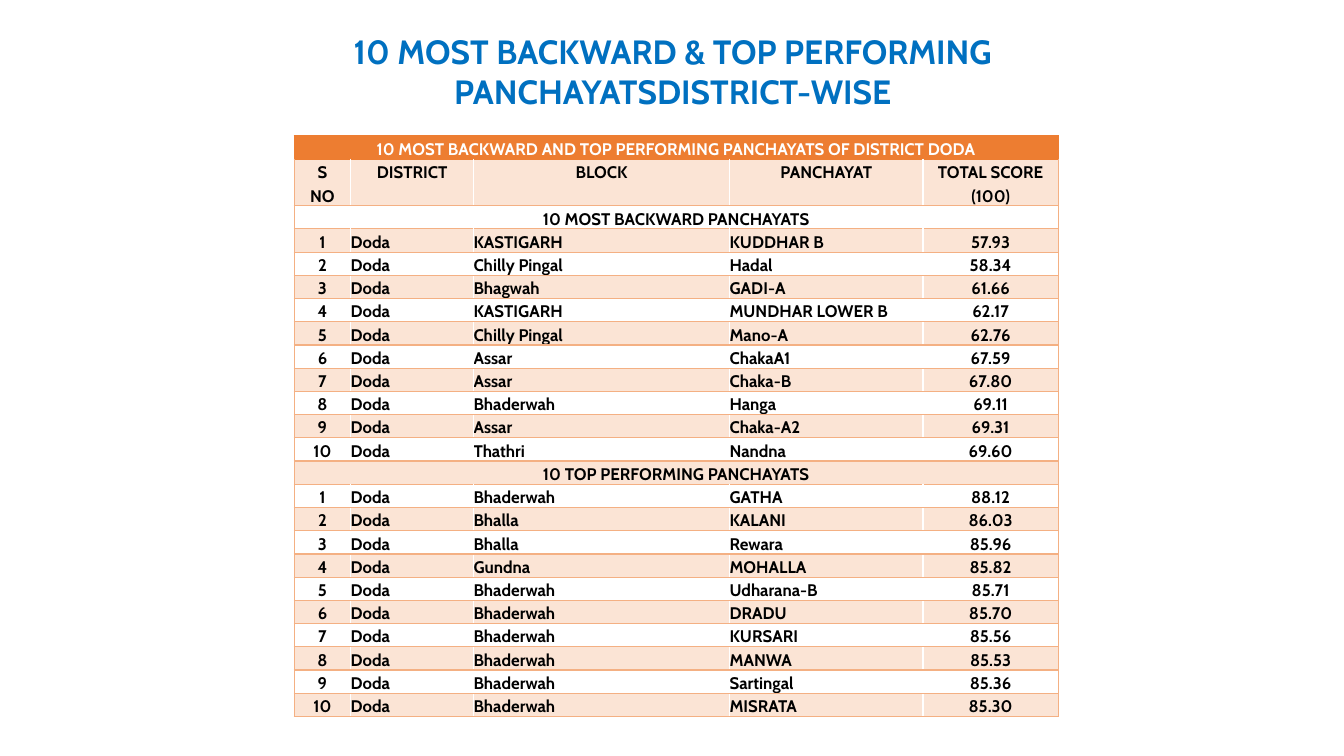
import pptx
import pptx.dml.color
import pptx.enum.text
import pptx.oxml
import pptx.oxml.ns
import pptx.util

COLORS = {
    "title": "0070C0",
    "header": "ED7D31",
    "border": "F4B083",
    "band": "FBE4D5",
    "text": "000000",
    "white": "FFFFFF",
}
ALIGN = pptx.enum.text.PP_ALIGN
COLUMN_WIDTHS = [40.3, 87.8, 182.9, 138.2, 96.5]
HEADINGS = ["S\nNO", "DISTRICT", "BLOCK", "PANCHAYAT", "TOTAL SCORE\n(100)"]
BACKWARD = [
    ("KASTIGARH", "KUDDHAR B", "57.93"),
    ("Chilly Pingal", "Hadal", "58.34"),
    ("Bhagwah", "GADI-A", "61.66"),
    ("KASTIGARH", "MUNDHAR LOWER B", "62.17"),
    ("Chilly Pingal", "Mano-A", "62.76"),
    ("Assar", "ChakaA1", "67.59"),
    ("Assar", "Chaka-B", "67.80"),
    ("Bhaderwah", "Hanga", "69.11"),
    ("Assar", "Chaka-A2", "69.31"),
    ("Thathri", "Nandna", "69.60"),
]
TOP = [
    ("Bhaderwah", "GATHA", "88.12"),
    ("Bhalla", "KALANI", "86.03"),
    ("Bhalla", "Rewara", "85.96"),
    ("Gundna", "MOHALLA", "85.82"),
    ("Bhaderwah", "Udharana-B", "85.71"),
    ("Bhaderwah", "DRADU", "85.70"),
    ("Bhaderwah", "KURSARI", "85.56"),
    ("Bhaderwah", "MANWA", "85.53"),
    ("Bhaderwah", "Sartingal", "85.36"),
    ("Bhaderwah", "MISRATA", "85.30"),
]


def numbered(panchayats):
    return [[str(number), "Doda", *entry] for number, entry in enumerate(panchayats, 1)]


class SlideBuilder:
    font_name = "Cabin"

    def __init__(self, slide):
        self.slide = slide

    def fill_text(self, frame, text, size, color, align, line_spacing=None):
        frame.text = text
        for para in frame.paragraphs:
            para.alignment = align
            para.line_spacing = line_spacing
            para.font.name = self.font_name
            para.font.size = pptx.util.Pt(size)
            para.font.bold = True
            para.font.color.rgb = pptx.dml.color.RGBColor.from_string(COLORS[color])

    def title(self, text, left, top, width, height):
        box = self.slide.shapes.add_textbox(*map(pptx.util.Pt, (left, top, width, height)))
        frame = box.text_frame
        frame.word_wrap = True
        frame.auto_size = pptx.enum.text.MSO_AUTO_SIZE.SHAPE_TO_FIT_TEXT
        frame.vertical_anchor = pptx.enum.text.MSO_ANCHOR.MIDDLE
        frame.margin_left = frame.margin_right = pptx.util.Pt(3.6)
        frame.margin_top = frame.margin_bottom = pptx.util.Pt(3.6)
        self.fill_text(frame, text, 24, "title", ALIGN.CENTER)

    def borders(self, cell, edges):
        properties = cell._tc.get_or_add_tcPr()
        for position, (side, color) in enumerate(edges.items()):
            line = pptx.oxml.parse_xml(
                f'<a:ln{side} {pptx.oxml.ns.nsdecls("a")} w="{pptx.util.Pt(1)}">'
                f'<a:solidFill><a:srgbClr val="{COLORS[color]}"/></a:solidFill></a:ln{side}>'
            )
            properties.insert(position, line)

    def cell(self, cell, text, fill, color, align, edges):
        cell.margin_left = cell.margin_right = 0
        cell.margin_top = cell.margin_bottom = 0
        if fill:
            cell.fill.solid()
            cell.fill.fore_color.rgb = pptx.dml.color.RGBColor.from_string(COLORS[fill])
        else:
            cell.fill.background()
        self.fill_text(cell.text_frame, text, 12, color, align, 1.15)
        self.borders(cell, edges)

    def table(self, rows, left, top, widths, row_height):
        last = len(widths) - 1
        frame = self.slide.shapes.add_table(
            len(rows), len(widths), pptx.util.Pt(left), pptx.util.Pt(top),
            pptx.util.Pt(sum(widths)), pptx.util.Pt(row_height * (len(rows) + 1)),
        )
        table = frame.table
        table.first_row = table.horz_banding = False
        for column, width in zip(table.columns, widths):
            column.width = pptx.util.Pt(width)
        for row_index, values in enumerate(rows):
            lines = max(value.count("\n") + 1 for value in values)
            table.rows[row_index].height = pptx.util.Pt(row_height * lines)
            spans = len(values) == 1
            if spans:
                table.cell(row_index, 0).merge(table.cell(row_index, last))
            is_header = row_index == 0
            outer = "header" if is_header else "border"
            fill = "header" if is_header else "band" if row_index % 2 else None
            for column_index, value in enumerate(values):
                edges = {
                    "L": outer if column_index == 0 else "white",
                    "R": outer if spans or column_index == last else "white",
                    "T": "header" if row_index < 2 else "border",
                    "B": outer,
                }
                centered = spans or row_index == 1 or column_index in (0, last)
                self.cell(
                    table.cell(row_index, column_index), value, fill,
                    "white" if is_header else "text",
                    ALIGN.CENTER if centered else ALIGN.LEFT, edges,
                )


def main():
    deck = pptx.Presentation()
    deck.slide_width = pptx.util.Pt(960)
    deck.slide_height = pptx.util.Pt(540)
    page = SlideBuilder(deck.slides.add_slide(deck.slide_layouts[6]))
    page.title(
        "10 MOST BACKWARD & TOP PERFORMING PANCHAYATSDISTRICT-WISE",
        160, 18, 641, 65.5,
    )
    rows = [
        ["10 MOST BACKWARD AND TOP PERFORMING PANCHAYATS OF DISTRICT DODA"],
        HEADINGS,
        ["10 MOST BACKWARD PANCHAYATS"],
        *numbered(BACKWARD),
        ["10 TOP PERFORMING PANCHAYATS"],
        *numbered(TOP),
    ]
    page.table(rows, 210.2, 97.2, COLUMN_WIDTHS, 15.2)
    deck.save("out.pptx")


if __name__ == "__main__":
    main()
